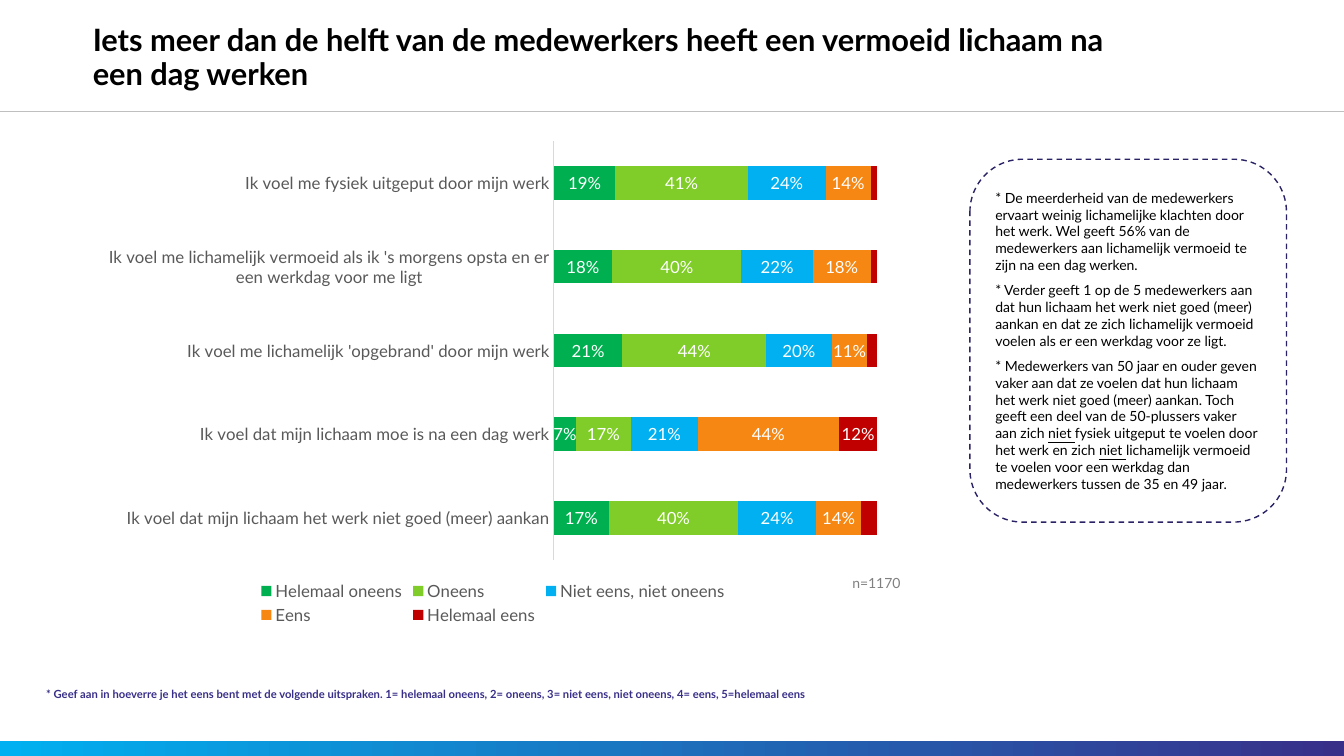
"""Build the slide on physical fatigue among staff."""
from dataclasses import dataclass

from lxml import etree
from pptx import Presentation
from pptx import util as u
from pptx.chart.data import CategoryChartData
from pptx.dml.color import RGBColor
from pptx.enum import chart as ch, dml, shapes, text
from pptx.oxml import parse_xml
from pptx.oxml.ns import nsdecls, qn


@dataclass(frozen=True)
class Theme:
    font: str = "Lato"
    black: str = "000000"
    white: str = "FFFFFF"
    grey: str = "595959"
    mute: str = "808080"
    rule: str = "BFBFBF"
    axis: str = "D9D9D9"
    blue: str = "00B0F0"
    navy: str = "382F89"
    edge: str = "292365"
    head: float = 22
    label: float = 12
    body: float = 10
    foot: float = 8


@dataclass(frozen=True)
class Run:
    words: str
    under: bool = False
    slant: bool = False


@dataclass(frozen=True)
class Series:
    name: str
    color: str
    vals: tuple[float, ...]
    blank: tuple[int, ...] = ()


T = Theme()
TITLE = "Iets meer dan de helft van de medewerkers heeft een vermoeid lichaam na een dag werken"
FOOT = ("* Geef aan in hoeverre je het eens bent met de volgende uitspraken. "
        "1= helemaal oneens, 2= oneens, 3= niet eens, niet oneens, 4= eens, 5=helemaal eens")
CATS = (
    "Ik voel me fysiek uitgeput door mijn werk",
    "Ik voel me lichamelijk vermoeid als ik 's morgens opsta en er een werkdag voor me ligt",
    "Ik voel me lichamelijk 'opgebrand' door mijn werk",
    "Ik voel dat mijn lichaam moe is na een dag werk",
    "Ik voel dat mijn lichaam het werk niet goed (meer) aankan",
)
SERIES = (
    Series("Helemaal oneens", "00B050", (0.19, 0.18, 0.21, 0.07, 0.17)),
    Series("Oneens", "80CC28", (0.41, 0.4, 0.44, 0.17, 0.4)),
    Series("Niet eens, niet oneens", T.blue, (0.24, 0.22, 0.2, 0.21, 0.24)),
    Series("Eens", "F68712", (0.14, 0.18, 0.11, 0.44, 0.14)),
    Series("Helemaal eens", "C00000", (0.02, 0.02, 0.03, 0.12, 0.05), (0, 1, 2, 4)),
)
NOTES = (
    (Run("* De meerderheid van de medewerkers ervaart weinig lichamelijke klachten door het werk. "
         "Wel geeft 56% van de medewerkers aan lichamelijk vermoeid te zijn na een dag werken."),),
    (Run("* Verder geeft 1 op de 5 medewerkers aan dat hun lichaam het werk niet goed (meer) aankan "
         "en dat ze zich lichamelijk vermoeid voelen als er een werkdag voor ze ligt."),),
    (Run("* Medewerkers van 50 jaar en ouder geven vaker aan dat ze voelen dat hun lichaam het werk "
         "niet goed (meer) aankan. Toch geeft een deel van de 50-plussers vaker aan zich "),
     Run("niet", under=True), Run(" ", under=True, slant=True),
     Run("fysiek uitgeput te voelen door het werk en zich "),
     Run("niet ", under=True),
     Run("lichamelijk vermoeid te voelen voor een werkdag dan medewerkers tussen de 35 en 49 jaar.")),
)


def rgb(code: str) -> RGBColor:
    return RGBColor.from_string(code)


def place(*dims: float) -> list[u.Length]:
    return [u.Inches(d) for d in dims]


def style(font, size: float, color: str, bold: bool = False) -> None:
    font.name, font.size, font.bold = T.font, u.Pt(size), bold
    font.color.rgb = rgb(color)


def write(par, runs: tuple[Run, ...], size: float, color: str, bold: bool = False) -> None:
    for item in runs:
        run = par.add_run()
        run.text = item.words
        style(run.font, size, color, bold)
        if item.under:
            run.font.underline = True
        if item.slant:
            run.font.italic = True


def add_frame(slide) -> None:
    bar = slide.shapes.add_shape(shapes.MSO_SHAPE.RECTANGLE, *place(0, 7.35, 13.33, 0.15))
    bar.shadow.inherit = False
    bar.line.fill.background()
    bar.fill.gradient()
    bar.fill.gradient_angle = 0
    for stop, color in zip(bar.fill.gradient_stops, (T.blue, T.navy)):
        stop.color.rgb = rgb(color)
    rule = slide.shapes.add_connector(shapes.MSO_CONNECTOR.STRAIGHT, *place(0, 1.1, 13.33, 1.1))
    rule.line.color.rgb = rgb(T.rule)
    rule.line.width = u.Pt(0.5)
    etree.SubElement(rule._element.spPr, qn("a:effectLst"))


def add_title(slide) -> None:
    title = slide.shapes.title
    title.left, title.top, title.width, title.height = place(0.92, 0.26, 10.06, 0.65)
    frame = title.text_frame
    frame.auto_size = text.MSO_AUTO_SIZE.NONE
    frame.word_wrap = True
    frame.vertical_anchor = text.MSO_ANCHOR.BOTTOM
    frame.margin_left = frame.margin_right = frame.margin_top = frame.margin_bottom = 0
    par = frame.paragraphs[0]
    par.alignment = text.PP_ALIGN.LEFT
    par.line_spacing = 0.9
    write(par, (Run(TITLE),), T.head, T.black, True)


def add_chart(slide) -> None:
    data = CategoryChartData(number_format="0%")
    data.categories = CATS
    for item in SERIES:
        data.add_series(item.name, item.vals)
    chart = slide.shapes.add_chart(
        ch.XL_CHART_TYPE.BAR_STACKED_100, *place(0.92, 1.3, 7.94, 4.94), data).chart
    style(chart.font, T.body, T.black)
    chart.has_title = False
    chart.has_legend = True
    chart.legend.position = ch.XL_LEGEND_POSITION.BOTTOM
    chart.legend.include_in_layout = False
    style(chart.legend.font, T.label, T.grey)
    axis = chart.category_axis
    axis.reverse_order = True
    axis.major_tick_mark = axis.minor_tick_mark = ch.XL_TICK_MARK.NONE
    axis.format.line.color.rgb = rgb(T.axis)
    axis.format.line.width = u.Pt(0.75)
    style(axis.tick_labels.font, T.label, T.grey)
    chart.value_axis.has_major_gridlines = False
    chart.value_axis.visible = False
    plot = chart.plots[0]
    plot.gap_width, plot.overlap = 150, 100
    plot.vary_by_categories = False
    for part, item in zip(plot.series, SERIES):
        part.format.fill.solid()
        part.format.fill.fore_color.rgb = rgb(item.color)
        tags = part.data_labels
        tags.show_value = True
        tags.position = ch.XL_LABEL_POSITION.CENTER
        tags.number_format, tags.number_format_is_linked = "0%", False
        style(tags.font, T.label, T.white)
        for spot, idx in enumerate(item.blank):
            tags._element.insert(spot, parse_xml(
                f'<c:dLbl {nsdecls("c")}><c:idx val="{idx}"/><c:delete val="1"/></c:dLbl>'))


def add_text(slide, dims: tuple[float, ...], words: str, size: float, color: str, bold: bool = False):
    frame = slide.shapes.add_textbox(*place(*dims)).text_frame
    frame.word_wrap = True
    par = frame.paragraphs[0]
    write(par, (Run(words),), size, color, bold)
    return par


def add_notes(slide) -> None:
    box = slide.shapes.add_shape(shapes.MSO_SHAPE.ROUNDED_RECTANGLE, *place(9.62, 1.58, 3.14, 3.6))
    box.shadow.inherit = False
    box.fill.background()
    box.line.color.rgb = rgb(T.edge)
    box.line.width = u.Pt(1)
    box.line.dash_style = dml.MSO_LINE.DASH
    frame = box.text_frame
    frame.word_wrap = True
    frame.vertical_anchor = text.MSO_ANCHOR.MIDDLE
    for idx, runs in enumerate(NOTES):
        par = frame.add_paragraph() if idx else frame.paragraphs[0]
        par.alignment = text.PP_ALIGN.LEFT
        par.space_before = u.Pt(6 if idx else 0)
        write(par, runs, T.body, T.black)


def main() -> None:
    deck = Presentation()
    deck.slide_width, deck.slide_height = place(13.33, 7.5)
    slide = deck.slides.add_slide(deck.slide_layouts[5])
    add_frame(slide)
    add_title(slide)
    add_chart(slide)
    add_text(slide, (0.36, 6.77, 11.54, 0.4), FOOT, T.foot, T.navy, True)
    add_notes(slide)
    count = add_text(slide, (8.33, 5.57, 0.7, 0.32), "n=1170", T.body, T.mute)
    count.alignment = text.PP_ALIGN.RIGHT
    count.line_spacing = 1.5
    deck.save("out.pptx")


if __name__ == "__main__":
    main()
